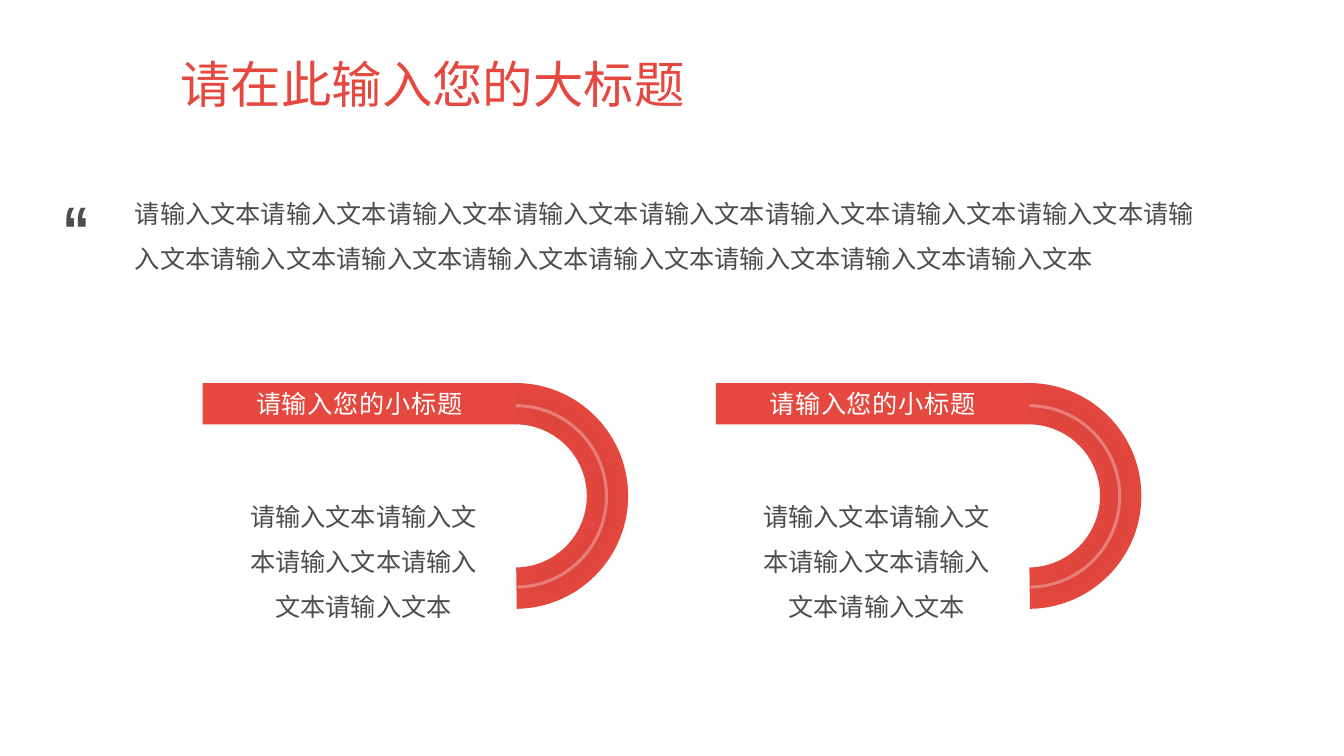
from lxml.etree import SubElement
from pptx import Presentation
from pptx.dml.color import RGBColor
from pptx.enum.shapes import MSO_SHAPE
from pptx.enum.text import MSO_ANCHOR, MSO_AUTO_SIZE, PP_ALIGN
from pptx.oxml import parse_xml
from pptx.oxml.ns import nsdecls, qn
from pptx.util import Pt

PX = 9144  # 100 px to the inch
RED = RGBColor(0xE5, 0x48, 0x3F)
PALE = RGBColor(0xFA, 0xDA, 0xD9)
GREY = RGBColor(0x4D, 0x4D, 0x4D)
WHITE = RGBColor(0xFF, 0xFF, 0xFF)
SANS = "Noto Sans CJK SC"
NARROW = "Arial Narrow"

BAND = 41  # thickness of the bar and the hook
HOOK = 224  # outer diameter of the hook
GLOW = 183  # diameter of the highlight along the hook
GLOW_LINE = 3
CARD_TOP = 380
CARD_LEFTS = (201, 710)


def px(*lengths):
    return [length * PX for length in lengths]


def write(box, text, size, color, font=SANS, align=PP_ALIGN.LEFT,
          anchor=MSO_ANCHOR.MIDDLE, spacing=None, bold=False, tracking=None):
    frame = box.text_frame
    frame.word_wrap = True
    frame.auto_size = MSO_AUTO_SIZE.NONE
    frame.vertical_anchor = anchor
    para = frame.paragraphs[0]
    para.alignment = align
    if spacing:
        para.line_spacing = spacing
    span = para.add_run()
    span.text = text
    span.font.size = Pt(size)
    span.font.bold = bold
    span.font.color.rgb = color
    span.font.name = font
    # East Asian typeface and letter spacing
    properties = span.font._element
    SubElement(properties, qn("a:ea")).set("typeface", font)
    if tracking:
        properties.set("spc", str(tracking))


def add_text(page, at, text, size=18, color=GREY, **style):
    box = page.shapes.add_textbox(*px(*at))
    write(box, text, size, color, **style)


def add_filled(page, preset, at, color):
    shape = page.shapes.add_shape(preset, *px(*at))
    shape.shadow.inherit = False
    shape.fill.solid()
    shape.fill.fore_color.rgb = color
    shape.line.fill.background()
    return shape


def add_arc(page, left, top, diameter, thickness, start, end, color):
    arc = add_filled(page, MSO_SHAPE.BLOCK_ARC,
                     (left, top, diameter, diameter), color)
    arc.rotation = 90
    for index, value in enumerate((start, end, thickness / diameter)):
        arc.adjustments[index] = value
    return arc


def soften(arc):
    """Make the highlight see-through and give it a soft shadow."""
    properties = arc._element.spPr
    color = properties.find(qn("a:solidFill")).find(qn("a:srgbClr"))
    SubElement(color, qn("a:alpha")).set("val", "39000")
    properties.find(qn("a:effectLst")).append(parse_xml(
        f'<a:outerShdw {nsdecls("a")} blurRad="{Pt(22)}" dist="0" dir="4800000">'
        '<a:srgbClr val="000000"/></a:outerShdw>'))


def add_card(page, left, heading, body):
    # Hook with its highlight
    hook_left = left + 198
    inset = (HOOK - GLOW) // 2
    add_arc(page, hook_left, CARD_TOP, HOOK, BAND, 108, 215.53, RED)
    soften(add_arc(page, hook_left + inset + 1, CARD_TOP + inset + 1, GLOW,
                   GLOW_LINE, 107.81, 215.35, PALE))
    # Body text
    add_text(page, (left + 35, 470, 249, 159), body,
             align=PP_ALIGN.CENTER, spacing=1.5)
    # Heading bar
    bar = add_filled(page, MSO_SHAPE.RECTANGLE, (left, CARD_TOP, 311, BAND), RED)
    write(bar, heading, 18, WHITE, align=PP_ALIGN.CENTER, tracking=50)


def main():
    deck = Presentation()
    deck.slide_width, deck.slide_height = px(1333, 750)
    page = deck.slides.add_slide(deck.slide_layouts[5])

    # Title
    title = page.shapes.title
    title.left, title.top, title.width, title.height = px(169, 40, 1044, 93)
    write(title, "请在此输入您的大标题", 36, RED, spacing=0.9)

    # Quotation
    add_text(page, (124, 160, 1085, 133), "请输入文本" * 16, spacing=1.5)
    add_text(page, (52, 181, 70, 91), "“", size=48, font=NARROW,
             anchor=MSO_ANCHOR.TOP, bold=True)

    # Cards
    for left in CARD_LEFTS:
        add_card(page, left, "请输入您的小标题", "请输入文本" * 5)

    deck.save("out.pptx")


if __name__ == "__main__":
    main()
